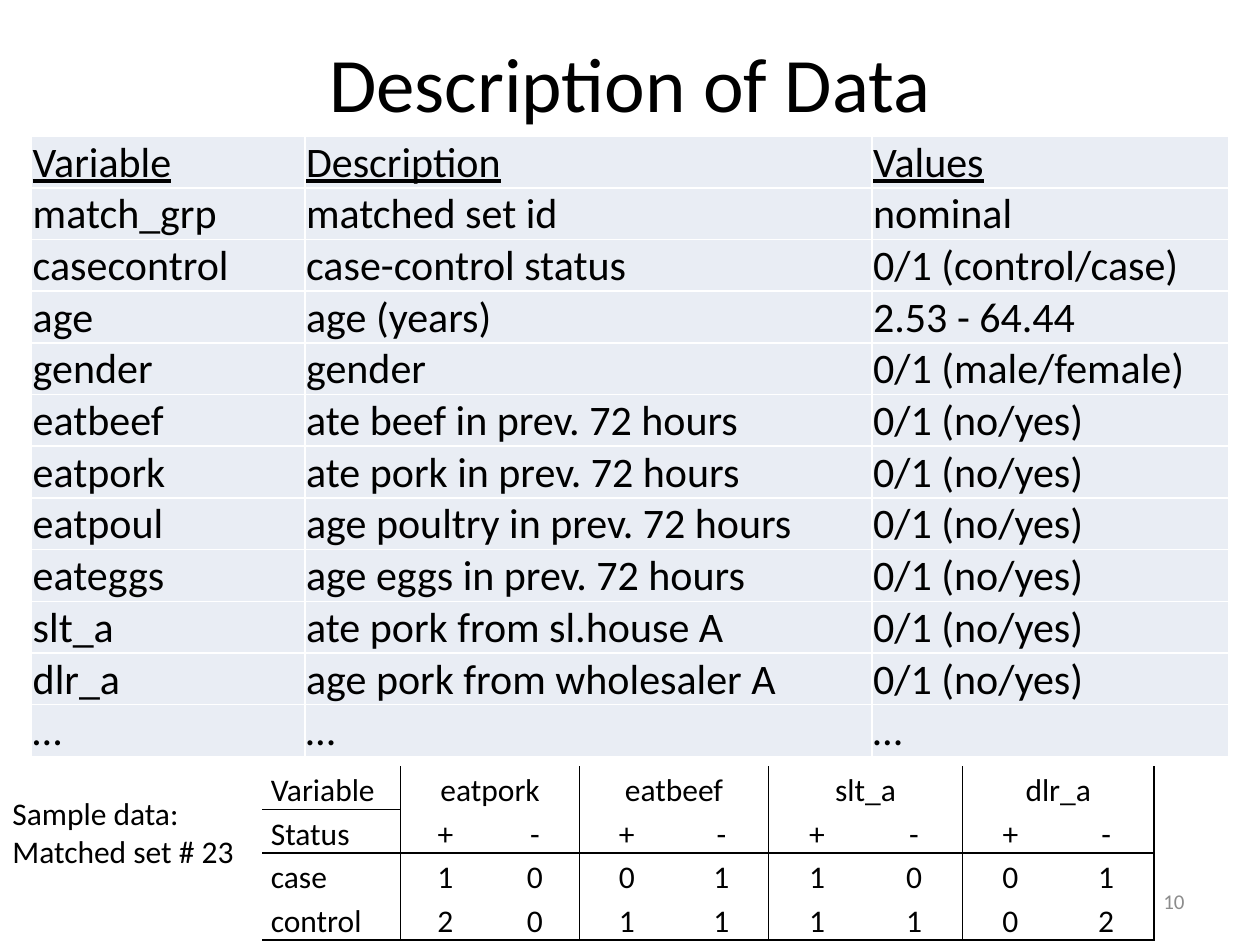
from lxml import etree
from pptx import Presentation
from pptx.dml.color import RGBColor
from pptx.enum.text import MSO_ANCHOR, PP_ALIGN
from pptx.oxml.ns import qn
from pptx.util import Inches, Pt

LEFT, CENTER, RIGHT = PP_ALIGN.LEFT, PP_ALIGN.CENTER, PP_ALIGN.RIGHT
TOP, MIDDLE, BOTTOM = MSO_ANCHOR.TOP, MSO_ANCHOR.MIDDLE, MSO_ANCHOR.BOTTOM
BLACK = RGBColor(0x00, 0x00, 0x00)
WHITE = RGBColor(0xFF, 0xFF, 0xFF)
GRAY = RGBColor(0x8C, 0x8C, 0x8C)
PALE_BLUE = RGBColor(0xE9, 0xED, 0xF4)
GRID_COLUMNS, GRID_ROWS = 100, 75
YES_NO = "0/1 (no/yes)"

VARIABLES = [
    ("Variable", "Description", "Values"),
    ("match_grp", "matched set id", "nominal"),
    ("casecontrol", "case-control status", "0/1 (control/case)"),
    ("age", "age (years)", "2.53 - 64.44"),
    ("gender", "gender", "0/1 (male/female)"),
    ("eatbeef", "ate beef in prev. 72 hours", YES_NO),
    ("eatpork", "ate pork in prev. 72 hours", YES_NO),
    ("eatpoul", "age poultry in prev. 72 hours", YES_NO),
    ("eateggs", "age eggs in prev. 72 hours", YES_NO),
    ("slt_a", "ate pork from sl.house A", YES_NO),
    ("dlr_a", "age pork from wholesaler A", YES_NO),
    ("…", "…", "…"),
]
MATCHED_SET = [
    ("Variable", "eatpork", "", "eatbeef", "", "slt_a", "", "dlr_a", ""),
    ("Status", *("+", "-") * 4),
    ("case", *"10011001"),
    ("control", *"20111102"),
]


class SlideBuilder:
    """Draw styled elements on one slide, placed on a 100 by 75 grid."""

    font = "Calibri"

    def __init__(self, presentation):
        self.slide = presentation.slides.add_slide(presentation.slide_layouts[6])
        self.column = presentation.slide_width / GRID_COLUMNS
        self.row = presentation.slide_height / GRID_ROWS

    def box(self, left, top, width, height):
        return (round(left * self.column), round(top * self.row),
                round(width * self.column), round(height * self.row))

    def format(self, text_frame, size, color=BLACK, align=LEFT, underline=False, spacing=1.0):
        for paragraph in text_frame.paragraphs:
            paragraph.alignment = align
            paragraph.line_spacing = spacing
            for run in paragraph.runs:
                run.font.name = self.font
                run.font.size = Pt(size)
                run.font.color.rgb = color
                run.font.underline = underline

    def text(self, text, place, size, color=BLACK, align=LEFT, anchor=TOP):
        text_frame = self.slide.shapes.add_textbox(*self.box(*place)).text_frame
        text_frame.word_wrap = True
        text_frame.vertical_anchor = anchor
        text_frame.text = text
        self.format(text_frame, size, color, align)

    def table(self, rows, place, widths):
        frame = self.slide.shapes.add_table(len(rows), len(widths), *self.box(*place))
        table = frame.table
        table.first_row = table.horz_banding = False
        for column, width in zip(table.columns, widths):
            column.width = round(width * self.column)
        for r, row in enumerate(rows):
            for c, text in enumerate(row):
                table.cell(r, c).text = text
        return table

    def cell(self, cell, margins, fill=None):
        cell.vertical_anchor = BOTTOM
        (cell.margin_left, cell.margin_top,
         cell.margin_right, cell.margin_bottom) = map(Inches, margins)
        if fill is None:
            cell.fill.background()
        else:
            cell.fill.solid()
            cell.fill.fore_color.rgb = fill

    def borders(self, cell, color, sides="LRTB"):
        properties = cell._tc.get_or_add_tcPr()
        for index, side in enumerate("LRTB"):
            line = etree.Element(qn(f"a:ln{side}"), w=str(Pt(1)))
            if side in sides:
                fill = etree.SubElement(line, qn("a:solidFill"))
                etree.SubElement(fill, qn("a:srgbClr"), val=str(color))
            else:
                etree.SubElement(line, qn("a:noFill"))
            properties.insert(index, line)

    def variable_table(self, rows, place, widths):
        table = self.table(rows, place, widths)
        for r in range(len(rows)):
            for c in range(len(widths)):
                cell = table.cell(r, c)
                self.cell(cell, (0.01, 0.01, 0.01, 0), PALE_BLUE)
                self.borders(cell, WHITE)
                self.format(cell.text_frame, 24, underline=r == 0)

    def matched_table(self, rows, place, widths):
        def ruled_right(r, c):
            return c >= 0 and (r == 0 or c % 2 == 0)

        def ruled_below(r, c):
            return r in (1, 3) or (r, c) == (0, 0)

        table = self.table(rows, place, widths)
        for r in range(len(rows)):
            for c in range(len(widths)):
                cell = table.cell(r, c)
                edges = {"L": ruled_right(r, c - 1), "R": ruled_right(r, c),
                         "T": ruled_below(r - 1, c), "B": ruled_below(r, c)}
                self.cell(cell, (0.07, 0, 0.07, 0))
                self.borders(cell, BLACK, [side for side in edges if edges[side]])
                self.format(cell.text_frame, 18, align=CENTER if c else LEFT, spacing=1.15)
        for c in range(1, len(widths), 2):
            table.cell(0, c).merge(table.cell(0, c + 1))


def main():
    presentation = Presentation()
    presentation.slide_width, presentation.slide_height = Inches(10), Inches(7.5)
    builder = SlideBuilder(presentation)
    builder.text("Description of Data", (5, 0.2, 90, 12.5), 44, align=CENTER, anchor=MIDDLE)
    builder.variable_table(VARIABLES, (2.5, 10.8, 95, 49), (21.7, 45, 28.3))
    builder.matched_table(MATCHED_SET, (20.8, 60.8, 70.8, 13.8),
                          (11, 7.1, 7.1, 7.5, 7.5, 7.7, 7.7, 7.6, 7.6))
    builder.text("Sample data:\nMatched set # 23", (0, 62.5, 20, 7.1), 18)
    builder.text("10", (71.7, 69.5, 23.3, 4), 12, GRAY, RIGHT, MIDDLE)
    presentation.save("out.pptx")


if __name__ == "__main__":
    main()
